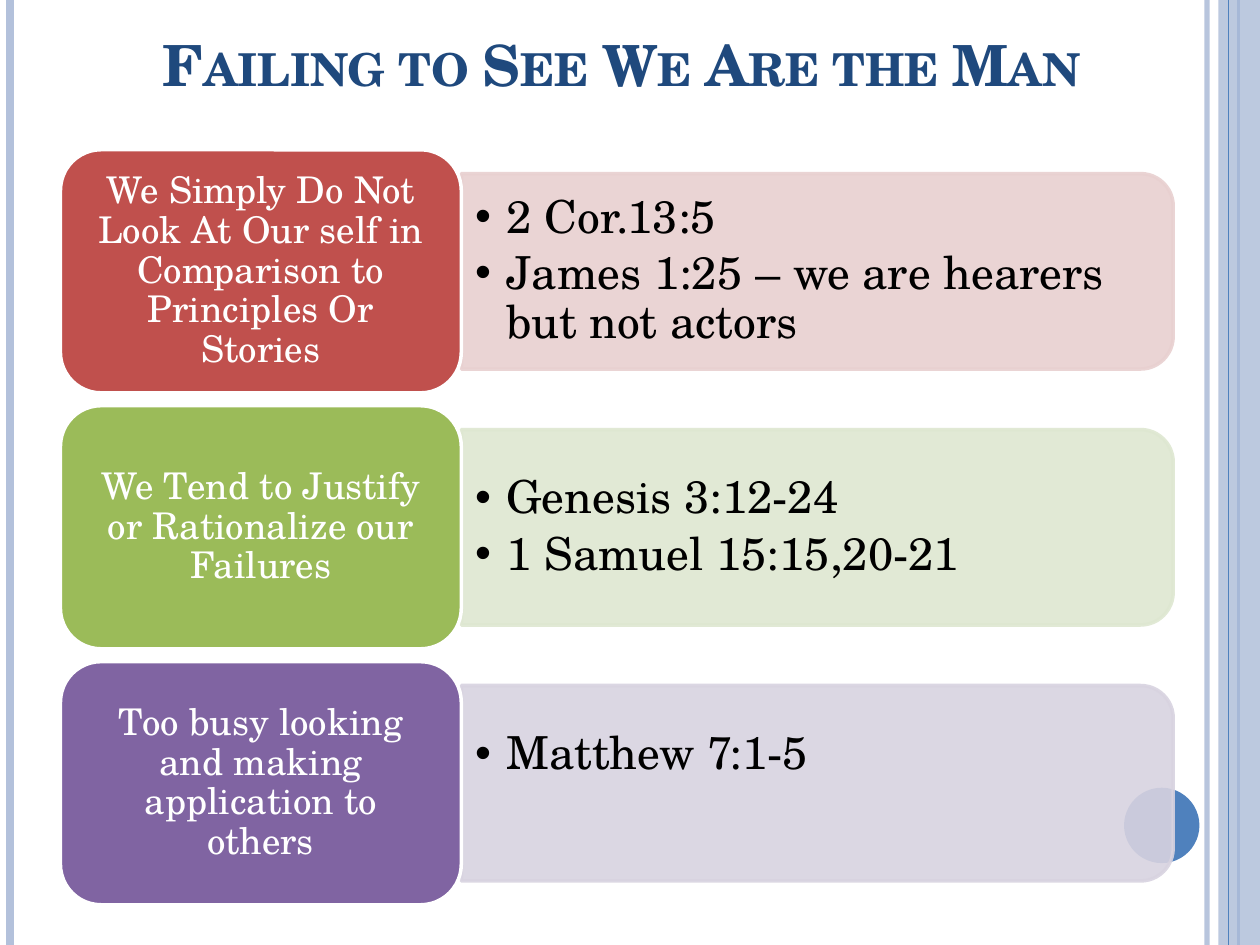
"""Build a slide of three failings, each with its Bible verses."""
from lxml.etree import SubElement
from pptx import Presentation
from pptx.dml.color import RGBColor
from pptx.enum.shapes import MSO_CONNECTOR, MSO_SHAPE
from pptx.enum.text import MSO_ANCHOR, MSO_AUTO_SIZE, PP_ALIGN
from pptx.oxml.ns import qn
from pptx.util import Cm, Pt

FONT = "TeX Gyre Schola"
WHITE = RGBColor(0xFF, 0xFF, 0xFF)
BLACK = RGBColor(0x00, 0x00, 0x00)
NAVY = RGBColor(0x1F, 0x49, 0x7D)
BLUE = RGBColor(0x4F, 0x81, 0xBD)
PALE = RGBColor(0xB3, 0xC1, 0xDB)
RED = RGBColor(0xC0, 0x50, 0x4D)
ROSE = RGBColor(0xE8, 0xD0, 0xD0)
GREEN = RGBColor(0x9B, 0xBB, 0x59)
MINT = RGBColor(0xDE, 0xE7, 0xD1)
PLUM = RGBColor(0x80, 0x64, 0xA2)
LILAC = RGBColor(0xD8, 0xD3, 0xE0)

WIDTH, HEIGHT = 25.4, 19.05
LEFT, TOP, STEP = 1.22, 3.02, 5.16
CARD_W, CARD_H = 8.08, 4.9
PANEL_W, PANEL_H = 14.35, 3.94
LIST_W, LIST_H = 14.17, 3.56
LINE_H = 1.13

ROWS = [
    ("We Simply Do Not Look At Our self in Comparison to Principles Or Stories",
     ["2 Cor.13:5", "James 1:25 – we are hearers but not actors"], RED, ROSE, 0),
    ("We Tend to Justify or Rationalize our Failures",
     ["Genesis 3:12-24", "1 Samuel 15:15,20-21"], GREEN, MINT, 0),
    ("Too busy looking and making application to others",
     ["Matthew 7:1-5"], PLUM, LILAC, LINE_H),
]


def write(frame, text, size, color, align=PP_ALIGN.LEFT, anchor=MSO_ANCHOR.MIDDLE,
          bold=False, small=False, bullet=False, space=0.9, pad=(0.25, 0.13, 0.25, 0.13)):
    """Fill a text frame with one paragraph for each line of text."""
    frame.word_wrap, frame.auto_size = True, MSO_AUTO_SIZE.NONE
    frame.vertical_anchor = anchor
    (frame.margin_left, frame.margin_top,
     frame.margin_right, frame.margin_bottom) = map(Cm, pad)
    frame.text = text
    for rank, para in enumerate(frame.paragraphs):
        para.alignment, para.line_spacing = align, space
        para.space_before = Pt(4 if rank else 0)
        if bullet:
            props = para._p.get_or_add_pPr()
            props.set("marL", str(Cm(0.63)))
            props.set("indent", str(Cm(-0.63)))
            SubElement(props, qn("a:buChar")).set("char", "•")
        for run in para.runs:
            font = run.font
            font.name, font.size, font.bold = FONT, Pt(size), bold
            font.color.rgb = color
            if small:
                run._r.get_or_add_rPr().set("cap", "small")


def fade(paint, alpha):
    """Set the opacity of a solid fill, in percent."""
    tint = paint._xPr.find(qn("a:solidFill"))[0]
    SubElement(tint, qn("a:alpha")).set("val", str(alpha * 1000))


class Deck:
    """Hold the style and the current slide."""

    def __init__(self):
        self.show = Presentation()
        self.show.slide_width, self.show.slide_height = Cm(WIDTH), Cm(HEIGHT)
        self.slide = self.show.slides.add_slide(self.show.slide_layouts[4])
        self.shapes = self.slide.shapes
        self.bodies = list(self.slide.placeholders)[1:]

    def rule(self, x, color, width, alpha=100):
        """Draw an upright line over the full height."""
        line = self.shapes.add_connector(
            MSO_CONNECTOR.STRAIGHT, Cm(x), Cm(0), Cm(x), Cm(HEIGHT))
        line.line.color.rgb, line.line.width = color, Pt(width)
        fade(line.line.fill, alpha)
        SubElement(line._element.spPr, qn("a:effectLst"))

    def shape(self, kind, x, y, w, h, color, edge=None, alpha=100):
        """Draw a filled shape, with an edge if one is given."""
        shape = self.shapes.add_shape(kind, Cm(x), Cm(y), Cm(w), Cm(h))
        shape.shadow.inherit = False
        shape.fill.solid()
        shape.fill.fore_color.rgb = color
        fade(shape.fill, alpha)
        if edge is None:
            shape.line.fill.background()
        else:
            shape.line.color.rgb, shape.line.width = edge, Pt(2)
            fade(shape.line.fill, alpha)
        return shape

    def holder(self, shape, x, y, w, h, text, **style):
        """Move a placeholder to the front and write in it."""
        shape.left, shape.top, shape.width, shape.height = map(Cm, (x, y, w, h))
        self.shapes._spTree.append(shape._element)
        write(shape.text_frame, text, **style)

    def title(self, text):
        """Place the slide title."""
        self.holder(self.shapes.title, 1.27, -1.07, 20.75, 3.18, text, size=32.4,
                    color=NAVY, align=PP_ALIGN.RIGHT, anchor=MSO_ANCHOR.BOTTOM,
                    bold=True, small=True, space=1)

    def card(self, y, text, color):
        """Draw the label of a row."""
        card = self.shape(MSO_SHAPE.ROUNDED_RECTANGLE, LEFT, y, CARD_W, CARD_H,
                          color, WHITE)
        write(card.text_frame, text, 21, WHITE, PP_ALIGN.CENTER,
              pad=(0.48, 0.33, 0.48, 0.33))

    def panel(self, y, lines, color, lift):
        """Draw the verse list of a row, raised by half the lift."""
        x, mid = LEFT + CARD_W, y + CARD_H / 2
        back = self.shape(MSO_SHAPE.ROUND_2_SAME_RECTANGLE,
                          x + (PANEL_W - PANEL_H) / 2, mid - PANEL_W / 2,
                          PANEL_H, PANEL_W, color, color, 90)
        back.rotation = 90
        self.holder(self.bodies.pop(0), x, mid - LIST_H / 2, LIST_W, LIST_H,
                    "\n".join(lines), size=26, color=BLACK, bullet=True,
                    pad=(0.28, 0.13, 0.28, 0.13 + lift))

    def save(self):
        """Drop unused placeholders and save the file."""
        for spare in self.bodies:
            spare._element.getparent().remove(spare._element)
        self.show.save("out.pptx")


def main():
    """Build the slide."""
    deck = Deck()
    deck.rule(24.33, PALE, 3, 93)
    deck.rule(0.2, PALE, 4.5)
    deck.rule(24.97, BLUE, 1.5)
    deck.shape(MSO_SHAPE.RECTANGLE, 24.56, 0, 0.84, HEIGHT, PALE, alpha=87)
    deck.rule(24.77, BLUE, 0.75)
    deck.shape(MSO_SHAPE.OVAL, 22.66, 15.88, 1.52, 1.52, BLUE)
    deck.title("Failing to See We Are the Man")
    for rank, (label, lines, dark, light, lift) in enumerate(ROWS):
        y = TOP + rank * STEP
        deck.panel(y, lines, light, lift)
        deck.card(y, label, dark)
    deck.save()


if __name__ == "__main__":
    main()
